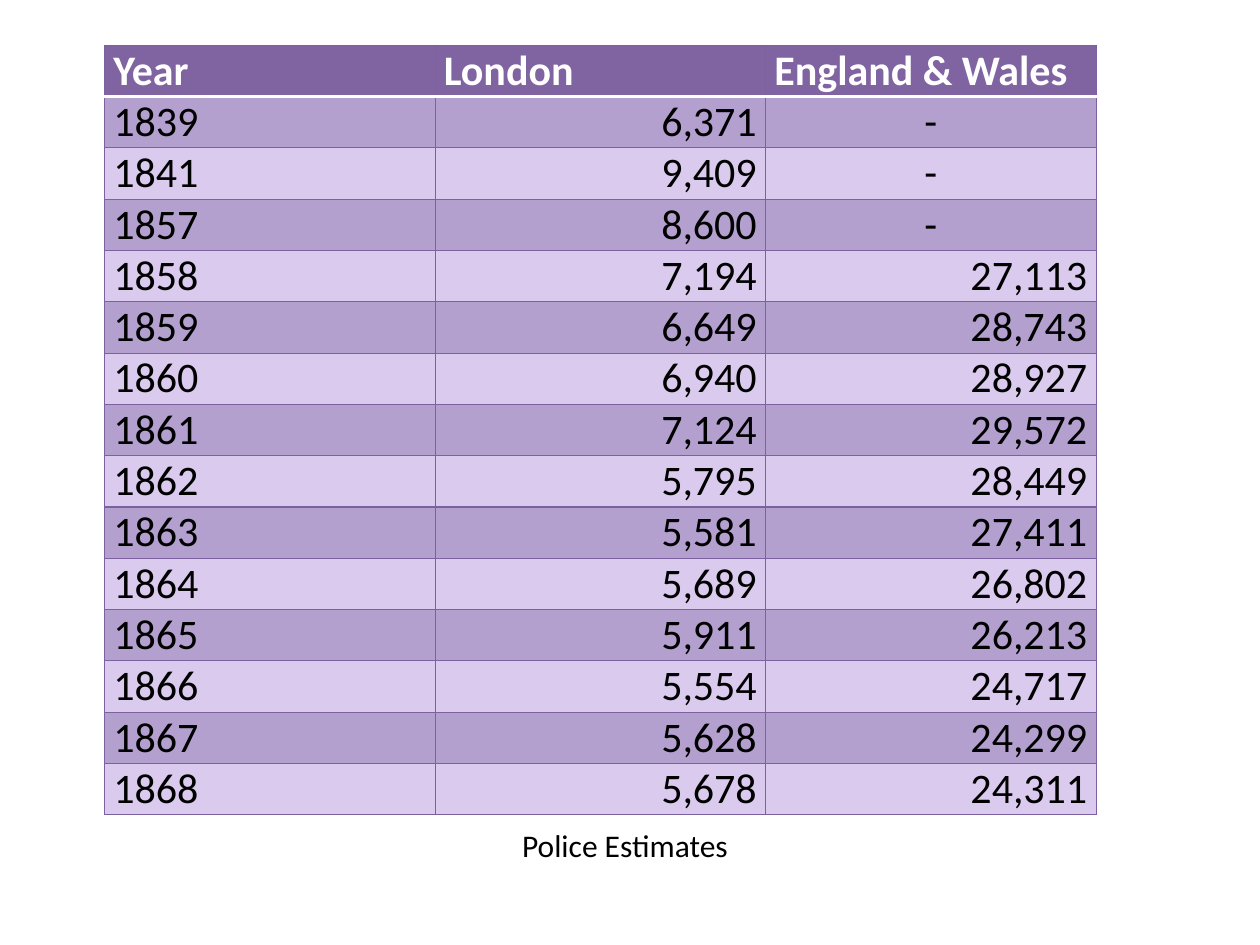
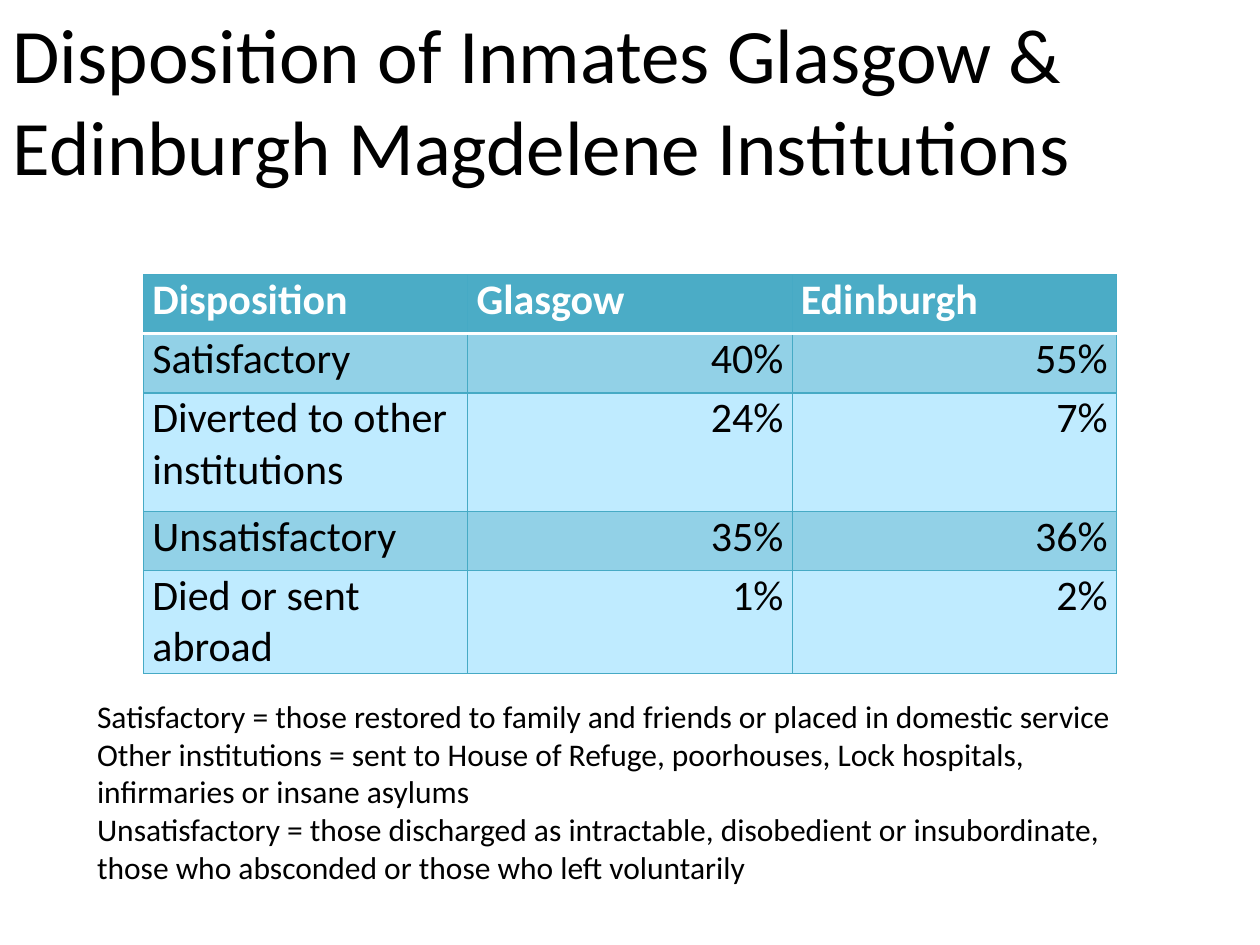
from lxml.etree import SubElement
from pptx import Presentation
from pptx.dml.color import RGBColor
from pptx.enum.text import MSO_ANCHOR as Anchor, MSO_AUTO_SIZE as AutoSize, PP_ALIGN as Align
from pptx.oxml.ns import qn
from pptx.util import Inches, Pt

WIDTH, HEIGHT = Inches(10), Inches(7.5)
COLUMN, ROW = WIDTH / 100, HEIGHT / 75
FONT = "Calibri"
BLACK = RGBColor(0x00, 0x00, 0x00)
WHITE = RGBColor(0xFF, 0xFF, 0xFF)
PURPLE = {
    "header": RGBColor(0x80, 0x64, 0xA2),
    "border": RGBColor(0x7D, 0x60, 0xA0),
    "bands": (RGBColor(0xB3, 0xA0, 0xCF), RGBColor(0xDA, 0xCA, 0xEE)),
}
TEAL = {
    "header": RGBColor(0x4B, 0xAC, 0xC6),
    "border": RGBColor(0x46, 0xAA, 0xC5),
    "bands": (RGBColor(0x92, 0xD1, 0xE7), RGBColor(0xBF, 0xEB, 0xFF)),
}

ESTIMATES = [
    ("Year", "London", "England & Wales"),
    ("1839", "6,371", "-"),
    ("1841", "9,409", "-"),
    ("1857", "8,600", "-"),
    ("1858", "7,194", "27,113"),
    ("1859", "6,649", "28,743"),
    ("1860", "6,940", "28,927"),
    ("1861", "7,124", "29,572"),
    ("1862", "5,795", "28,449"),
    ("1863", "5,581", "27,411"),
    ("1864", "5,689", "26,802"),
    ("1865", "5,911", "26,213"),
    ("1866", "5,554", "24,717"),
    ("1867", "5,628", "24,299"),
    ("1868", "5,678", "24,311"),
]
DISPOSITIONS = [
    ("Disposition", "Glasgow", "Edinburgh"),
    ("Satisfactory", "40%", "55%"),
    ("Diverted to other institutions", "24%", "7%"),
    ("Unsatisfactory", "35%", "36%"),
    ("Died or sent abroad", "1%", "2%"),
]
DEFINITIONS = [
    "Satisfactory = those restored to family and friends or placed in domestic service",
    "Other institutions = sent to House of Refuge, poorhouses, Lock hospitals, "
    "infirmaries or insane asylums",
    "Unsatisfactory = those discharged as intractable, disobedient or insubordinate, "
    "those who absconded or those who left voluntarily",
]


def on_grid(left, top, width, height):
    """Turn grid columns and rows into slide lengths."""
    return round(left * COLUMN), round(top * ROW), round(width * COLUMN), round(height * ROW)


def write(paragraph, text, size, color=BLACK, bold=False, align=Align.LEFT):
    """Add one formatted run to a paragraph."""
    paragraph.alignment = align
    run = paragraph.add_run()
    run.text = text
    font = run.font
    font.name, font.size, font.bold = FONT, Pt(size), bold
    font.color.rgb = color


def fill_text(shape, lines, size, align=Align.LEFT):
    """Write plain unbulleted paragraphs from the top of a shape."""
    frame = shape.text_frame
    frame.word_wrap = True
    frame.auto_size = AutoSize.NONE
    frame.vertical_anchor = Anchor.TOP
    for index, line in enumerate(lines):
        paragraph = frame.add_paragraph() if index else frame.paragraphs[0]
        properties = paragraph._p.get_or_add_pPr()
        properties.set("marL", "0")
        properties.set("indent", "0")
        SubElement(properties, qn("a:buNone"))
        paragraph.space_before = Pt(0)
        write(paragraph, line, size, align=align)


def fill_placeholder(placeholder, area, lines, size):
    """Move a template placeholder and write its text."""
    placeholder.left, placeholder.top, placeholder.width, placeholder.height = on_grid(*area)
    fill_text(placeholder, lines, size)


def add_caption(slide, area, text):
    """Add a centred caption."""
    fill_text(slide.shapes.add_textbox(*on_grid(*area)), [text], 18, Align.CENTER)


def draw_borders(cell, row, color):
    """Outline a cell, with a heavy white rule under the header."""
    properties = cell._tc.get_or_add_tcPr()
    for side in "LRTB":
        under_header = (row, side) in ((0, "B"), (1, "T"))
        line = SubElement(properties, qn(f"a:ln{side}"), w=str(Pt(2 if under_header else 0.75)))
        paint = SubElement(line, qn("a:solidFill"))
        SubElement(paint, qn("a:srgbClr"), val=str(WHITE if under_header else color))


def cell_align(row, column, text):
    """Choose the alignment of labels, figures and missing values."""
    if row == 0 or column == 0:
        return Align.LEFT
    return Align.CENTER if text == "-" else Align.RIGHT


def add_banded_table(slide, left, top, width, heights, records, palette):
    """Add a table with a coloured header and alternating bands."""
    area = on_grid(left, top, width, sum(heights))
    table = slide.shapes.add_table(len(records), len(records[0]), *area).table
    for row, (record, height) in enumerate(zip(records, heights)):
        table.rows[row].height = round(height * ROW)
        for column, text in enumerate(record):
            cell = table.cell(row, column)
            cell.margin_left = cell.margin_right = Inches(0.07)
            cell.margin_top = cell.margin_bottom = 0
            draw_borders(cell, row, palette["border"])
            cell.fill.solid()
            cell.fill.fore_color.rgb = palette["bands"][(row - 1) % 2] if row else palette["header"]
            write(cell.text_frame.paragraphs[0], text, 24, BLACK if row else WHITE,
                  row == 0, cell_align(row, column, text))


def build_estimates(deck):
    """Build the slide of police estimates by year."""
    slide = deck.slides.add_slide(deck.slide_layouts[6])
    add_banded_table(slide, 8.3, 3.6, 78.7, [4] * len(ESTIMATES), ESTIMATES, PURPLE)
    add_caption(slide, (13, 65.1, 73.2, 4), "Police Estimates")


def build_dispositions(deck):
    """Build the slide comparing the two institutions."""
    slide = deck.slides.add_slide(deck.slide_layouts[1])
    title = "Disposition of Inmates Glasgow & Edinburgh Magdelene Institutions"
    fill_placeholder(slide.shapes.title, (0, 0, 100, 20.5), [title], 44)
    add_banded_table(slide, 11.4, 21.8, 77.2, [4.7, 4.7, 9.4, 4.7, 8], DISPOSITIONS, TEAL)
    fill_placeholder(slide.placeholders[1], (6.7, 54.8, 85, 16.2), DEFINITIONS, 18)


def main():
    """Build and save both slides."""
    deck = Presentation()
    deck.slide_width, deck.slide_height = WIDTH, HEIGHT
    build_estimates(deck)
    build_dispositions(deck)
    deck.save("out.pptx")


if __name__ == "__main__":
    main()
